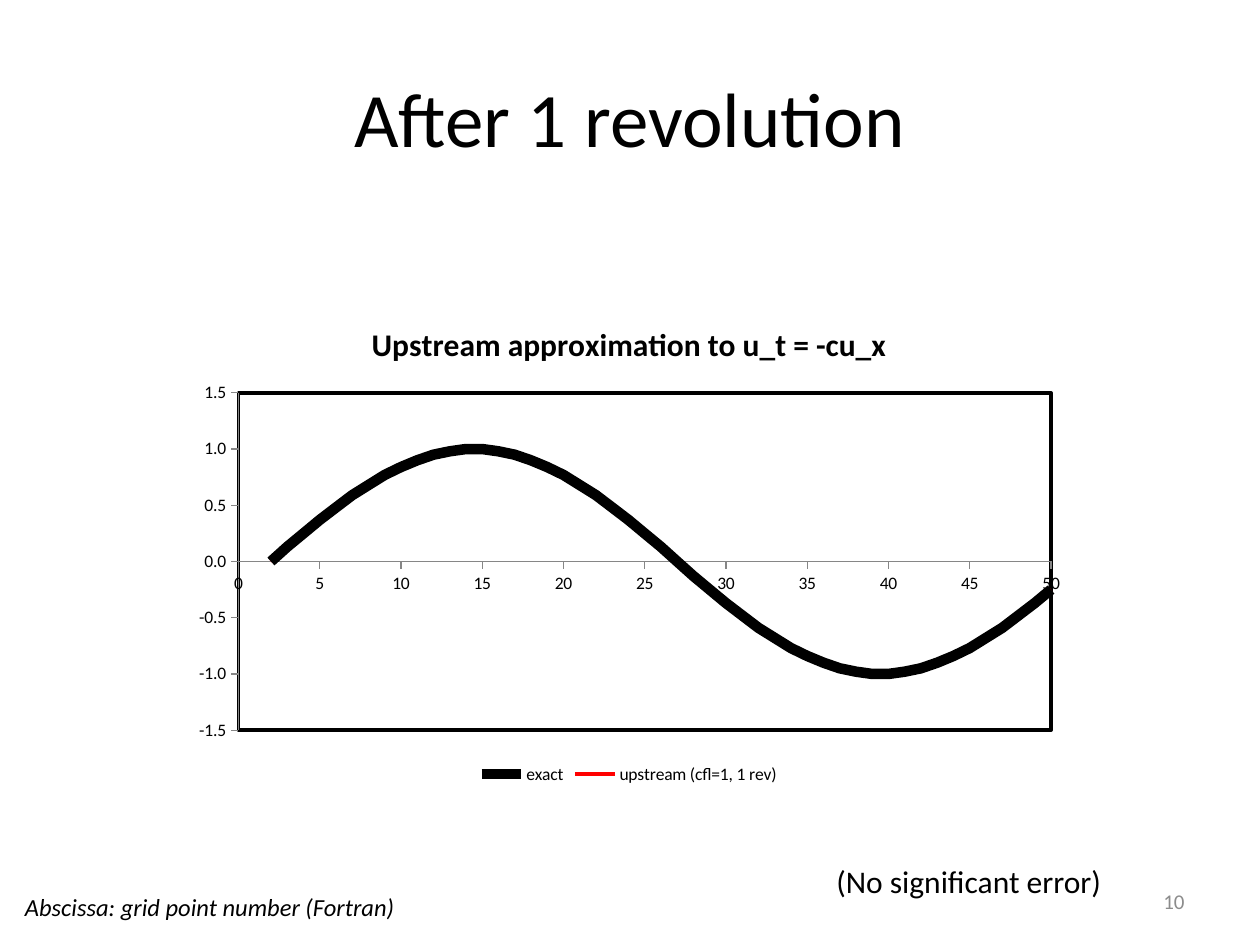
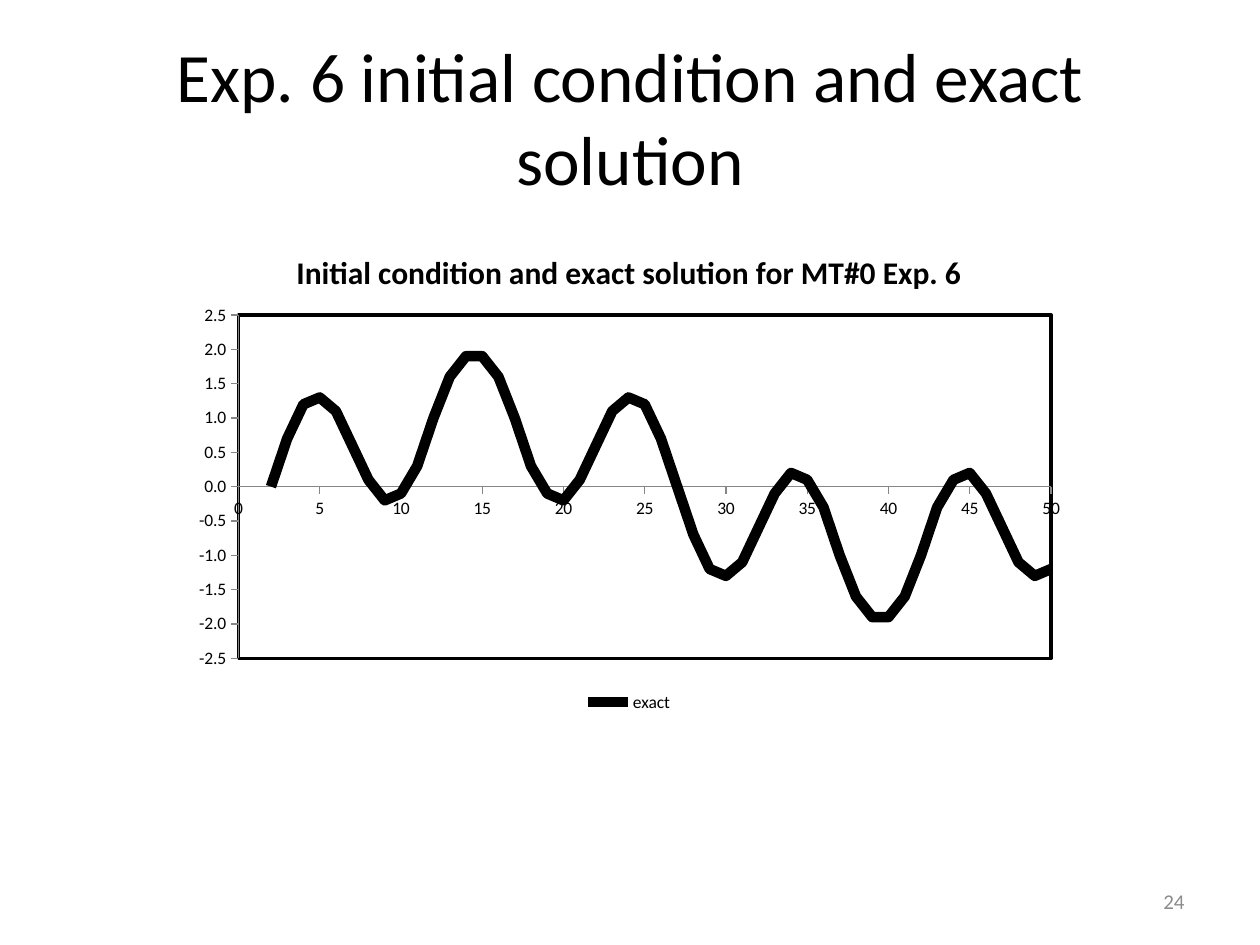
"""Build two slides of advection results with scatter charts."""
from dataclasses import dataclass
from math import pi, sin

from lxml import etree
from pptx import Presentation
from pptx.chart.data import XyChartData
from pptx.dml.color import RGBColor
from pptx.enum.chart import XL_CHART_TYPE, XL_LEGEND_POSITION, XL_TICK_MARK
from pptx.enum.text import MSO_ANCHOR, MSO_AUTO_SIZE, PP_ALIGN
from pptx.oxml import parse_xml
from pptx.oxml.ns import nsdecls, qn
from pptx.util import Pt

LINES = XL_CHART_TYPE.XY_SCATTER_LINES_NO_MARKERS
BOTTOM = XL_LEGEND_POSITION.BOTTOM
OUTSIDE = XL_TICK_MARK.OUTSIDE
NO_TICK = XL_TICK_MARK.NONE
MIDDLE = MSO_ANCHOR.MIDDLE
TOP = MSO_ANCHOR.TOP
NO_FIT = MSO_AUTO_SIZE.NONE
LEFT, CENTER, RIGHT = PP_ALIGN.LEFT, PP_ALIGN.CENTER, PP_ALIGN.RIGHT


@dataclass(frozen=True)
class Theme:
    """Colours, font and type sizes shared by the slides."""
    font: str = "Calibri"
    ink: str = "000000"
    paper: str = "FFFFFF"
    red: str = "FF0000"
    axis: str = "868686"
    muted: str = "8C8C8C"
    remark: float = 18
    note: float = 14
    number: float = 12
    chart_title: float = 18
    chart_text: float = 10
    frame: float = 2
    axis_line: float = 0.75


T = Theme()
SLIDE_SIZE = (720, 540)
TITLE_BOX = (36, 21.6, 648, 90)
NUMBER_BOX = (516, 500.4, 168, 28.8)
CHART_LEFT, CHART_WIDTH, CHART_HEIGHT = 103.5, 512, 279.5
PLOT_X, PLOT_W = 0.064, 0.907
GRID = range(2, 52)
WAVELENGTH = 50

EXACT = ("exact", T.ink, 6)
UPSTREAM = ("upstream (cfl=1, 1 rev)", T.red, 2.5)

SLIDES = [
    dict(title="After 1 revolution", title_size=44, number="10",
         chart_title="Upstream approximation to u_t = -cu_x", chart_top=171.4,
         series=[EXACT, UPSTREAM], waves=(1,), digits=2, limit=1.5,
         plot_y=0.19, plot_h=0.69,
         notes=[("(No significant error)", (470.9, 488.9, 167.8, 28.8), T.remark, False),
                ("Abscissa: grid point number (Fortran)", (7.2, 506.2, 227.5, 24.5),
                 T.note, True)]),
    dict(title="Exp. 6 initial condition and exact solution", title_size=39.6, number="24",
         chart_title="Initial condition and exact solution for MT#0 Exp. 6", chart_top=130.3,
         series=[EXACT], waves=(1, 5), digits=1, limit=2.5,
         plot_y=0.178, plot_h=0.702, notes=[]),
]


def rgb(color):
    return RGBColor.from_string(color)


def pts(box):
    return [Pt(v) for v in box]


def wave_height(point, waves, digits):
    """Sum the sine waves at one grid point."""
    phase = 2 * pi * (point - GRID[0]) / WAVELENGTH
    return round(sum(sin(n * phase) for n in waves), digits)


def style_font(font, size, color=T.ink, bold=False, italic=False):
    font.name, font.size = T.font, Pt(size)
    font.bold, font.italic = bold, italic
    font.color.rgb = rgb(color)


def write(tf, text, size, color=T.ink, align=LEFT, anchor=TOP, wrap=True, italic=False):
    """Put one formatted run into a text frame."""
    tf.auto_size = NO_FIT
    tf.word_wrap = wrap
    tf.vertical_anchor = anchor
    p = tf.paragraphs[0]
    p.alignment = align
    r = p.add_run()
    r.text = text
    style_font(r.font, size, color, italic=italic)


def add_text(s, box, *args, **kwargs):
    write(s.shapes.add_textbox(*pts(box)).text_frame, *args, **kwargs)


def style_axis(axis, low, high, step, number_format):
    axis.minimum_scale, axis.maximum_scale = low, high
    axis.major_unit = step
    axis.has_major_gridlines = False
    axis.major_tick_mark, axis.minor_tick_mark = OUTSIDE, NO_TICK
    axis.format.line.color.rgb = rgb(T.axis)
    axis.format.line.width = Pt(T.axis_line)
    axis.tick_labels.number_format = number_format
    axis.tick_labels.number_format_is_linked = False
    style_font(axis.tick_labels.font, T.chart_text)


def frame_plot(chart, y, h):
    """Fix the inner plot area and draw its frame."""
    area = chart.plots[0]._element.getparent()
    layout = area.find(qn("c:layout"))
    if layout is not None:
        area.remove(layout)
    layout = etree.Element(qn("c:layout"))
    manual = etree.SubElement(layout, qn("c:manualLayout"))
    for tag, val in (("layoutTarget", "inner"), ("xMode", "edge"), ("yMode", "edge"),
                     ("x", PLOT_X), ("y", y), ("w", PLOT_W), ("h", h)):
        etree.SubElement(manual, qn(f"c:{tag}")).set("val", str(val))
    area.insert(0, layout)
    area.append(parse_xml(
        f'<c:spPr {nsdecls("c", "a")}>'
        f'<a:solidFill><a:srgbClr val="{T.paper}"/></a:solidFill>'
        f'<a:ln w="{Pt(T.frame)}"><a:solidFill><a:srgbClr val="{T.ink}"/></a:solidFill></a:ln>'
        '</c:spPr>'))


def add_wave_chart(s, item):
    data = XyChartData()
    for name, _, _ in item["series"]:
        points = data.add_series(name)
        for x in GRID:
            points.add_data_point(x, wave_height(x, item["waves"], item["digits"]))
    box = (CHART_LEFT, item["chart_top"], CHART_WIDTH, CHART_HEIGHT)
    chart = s.shapes.add_chart(LINES, *pts(box), data).chart
    style_font(chart.font, T.chart_text)

    chart.has_title = True
    r = chart.chart_title.text_frame.paragraphs[0].add_run()
    r.text = item["chart_title"]
    style_font(r.font, T.chart_title, bold=True)
    chart.chart_title.include_in_layout = False

    chart.has_legend = True
    chart.legend.position = BOTTOM
    chart.legend.include_in_layout = False
    style_font(chart.legend.font, T.chart_text)

    style_axis(chart.category_axis, 0, 50, 5, "General")
    style_axis(chart.value_axis, -item["limit"], item["limit"], 0.5, "#,##0.0")
    plot = chart.plots[0]
    plot.vary_by_categories = False
    for line, (_, color, width) in zip(plot.series, item["series"]):
        line.format.line.color.rgb = rgb(color)
        line.format.line.width = Pt(width)
    frame_plot(chart, item["plot_y"], item["plot_h"])


def add_slide(prs, item):
    s = prs.slides.add_slide(prs.slide_layouts[5])
    title = s.shapes.title
    title.left, title.top, title.width, title.height = pts(TITLE_BOX)
    write(title.text_frame, item["title"], item["title_size"], align=CENTER, anchor=MIDDLE)
    add_wave_chart(s, item)
    add_text(s, NUMBER_BOX, item["number"], T.number, T.muted, RIGHT, MIDDLE)
    for text, box, size, italic in item["notes"]:
        add_text(s, box, text, size, wrap=False, italic=italic)


def main():
    prs = Presentation()
    prs.slide_width, prs.slide_height = pts(SLIDE_SIZE)
    for item in SLIDES:
        add_slide(prs, item)
    prs.save("out.pptx")


if __name__ == "__main__":
    main()
